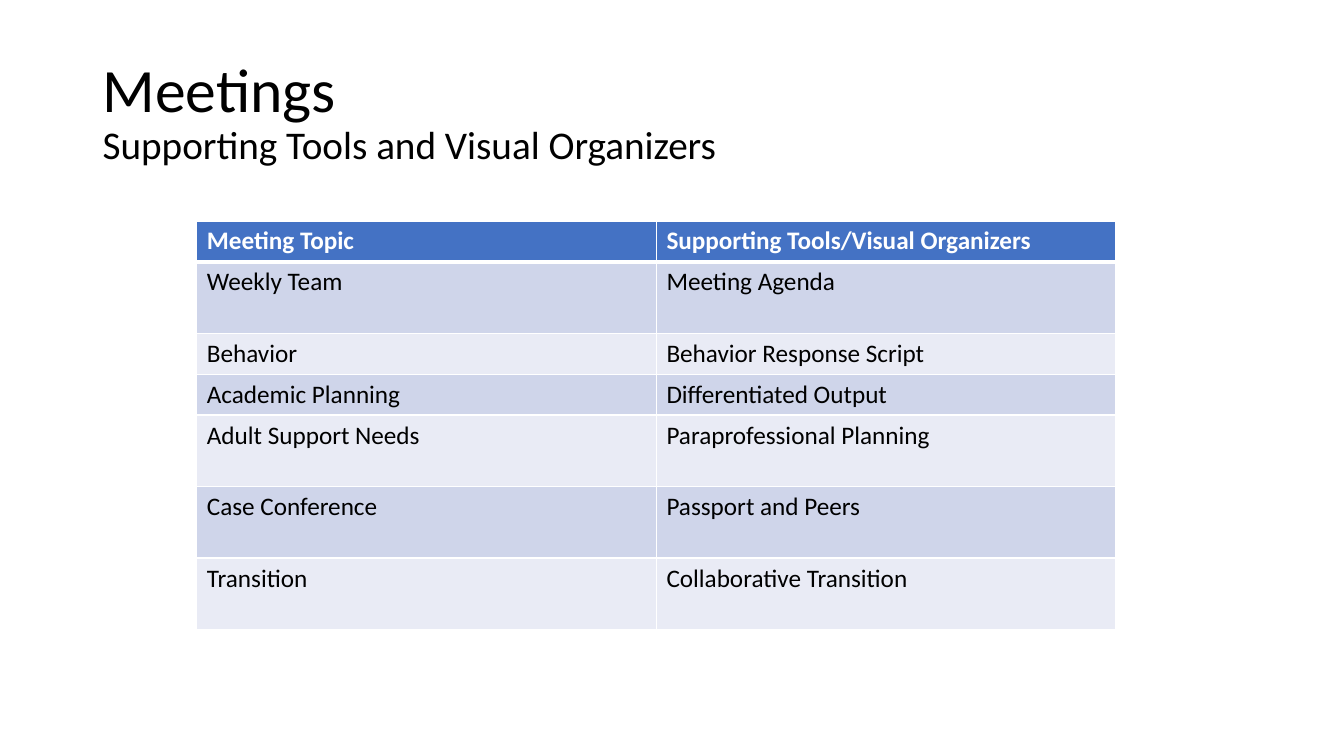
from lxml import etree
from pptx import Presentation, util as u
from pptx.dml.color import RGBColor
from pptx.enum import text
from pptx.oxml import ns

ROWS = [
    ("Meeting Topic", "Supporting Tools/Visual Organizers", 29.2),
    ("Weekly Team", "Meeting Agenda", 51.1),
    ("Behavior", "Behavior Response Script", 29.2),
    ("Academic Planning", "Differentiated Output", 29.2),
    ("Adult Support Needs", "Paraprofessional Planning", 51.1),
    ("Case Conference", "Passport and Peers", 51.1),
    ("Transition", "Collaborative Transition", 51.1),
]


def color(value):
    return RGBColor.from_string(value)


def write(para, words, size=18, ink="000000", bold=False, font="Calibri"):
    span = para.add_run()
    span.text = words
    span.font.name = font
    span.font.size = u.Pt(size)
    span.font.bold = bold
    span.font.color.rgb = color(ink)


class Page:
    header = "4472C4"
    bands = ("E9EBF5", "CFD5EA")
    white = "FFFFFF"

    def __init__(self, deck):
        self.slide = deck.slides.add_slide(deck.slide_layouts[6])

    def title(self, heading, subtitle, left, top, width, height):
        box = self.slide.shapes.add_textbox(*map(u.Pt, (left, top, width, height)))
        frame = box.text_frame
        frame.word_wrap = True
        frame.vertical_anchor = text.MSO_ANCHOR.MIDDLE
        para = frame.paragraphs[0]
        para.line_spacing = 0.9
        write(para, heading, size=44)
        para.add_line_break()
        write(para, subtitle, size=28)

    def border(self, cell, side, width):
        properties = cell._tc.get_or_add_tcPr()
        line = etree.SubElement(properties, ns.qn("a:" + side), w=str(u.Pt(width)))
        fill = etree.SubElement(line, ns.qn("a:solidFill"))
        etree.SubElement(fill, ns.qn("a:srgbClr"), val=self.white)

    def table(self, rows, left, top, column_width):
        columns = len(rows[0]) - 1
        height = sum(row[-1] for row in rows)
        area = map(u.Pt, (left, top, columns * column_width, height))
        table = self.slide.shapes.add_table(len(rows), columns, *area).table
        for index, (*labels, row_height) in enumerate(rows):
            table.rows[index].height = u.Pt(row_height)
            is_header = index == 0
            for column, label in enumerate(labels):
                cell = table.cell(index, column)
                self.border(cell, "lnL", 1)
                self.border(cell, "lnR", 1)
                self.border(cell, "lnT", 3 if index == 1 else 1)
                self.border(cell, "lnB", 3 if is_header else 1)
                cell.fill.solid()
                cell.fill.fore_color.rgb = color(self.header if is_header else self.bands[index % 2])
                ink = self.white if is_header else "000000"
                write(cell.text_frame.paragraphs[0], label, ink=ink, bold=is_header)


def main():
    deck = Presentation()
    deck.slide_width, deck.slide_height = u.Pt(960), u.Pt(540)
    page = Page(deck)
    page.title("Meetings", "Supporting Tools and Visual Organizers", 66.24, 28.8, 828, 104.4)
    page.table(ROWS, 140.6, 157.8, 328.3)
    deck.save("out.pptx")


if __name__ == "__main__":
    main()
